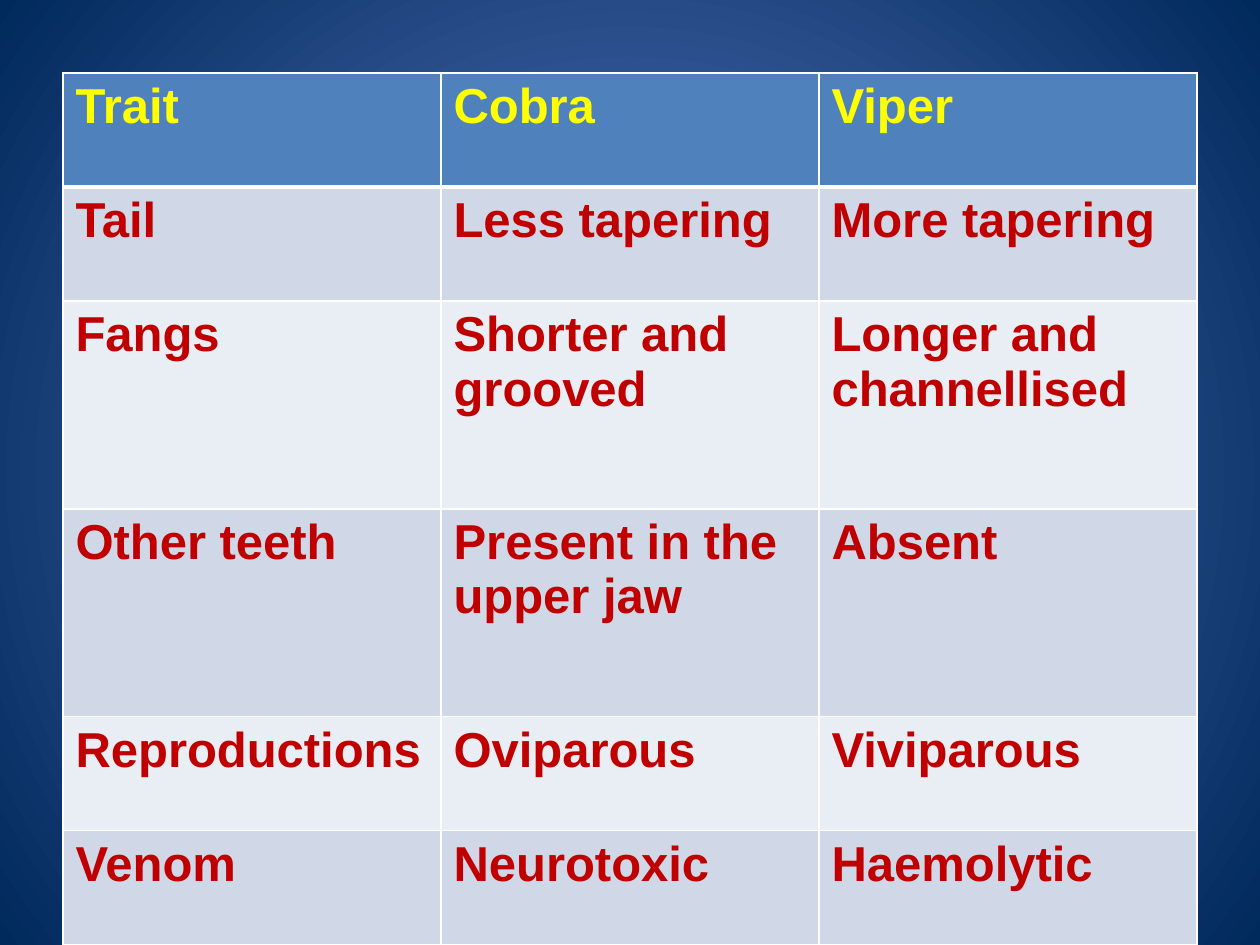
from dataclasses import dataclass

from lxml import etree
from pptx import Presentation
from pptx.dml.color import RGBColor
from pptx.enum.dml import MSO_THEME_COLOR
from pptx.oxml.ns import qn
from pptx.util import Pt

ACCENT = MSO_THEME_COLOR.ACCENT_1
BLANK_LAYOUT = 6


@dataclass(frozen=True)
class Theme:
    font: str = "Arial"
    text_size: float = 28
    header_text: str = "FFFF00"
    body_text: str = "C00000"
    header_fill: str = "4F81BD"
    band_fills: tuple = ("D0D8E8", "E9EDF4")
    border: str = "FFFFFF"
    border_width: float = 1
    header_rule_width: float = 3
    glow_center: str = "5E7CC5"
    glow_edge: str = "00295C"


THEME = Theme()

TRAITS = [
    ("Trait", "Cobra", "Viper"),
    ("Tail", "Less tapering", "More tapering"),
    ("Fangs", "Shorter and grooved", "Longer and channellised"),
    ("Other teeth", "Present in the upper jaw", "Absent"),
    ("Reproductions", "Oviparous", "Viviparous"),
    ("Venom", "Neurotoxic", "Haemolytic"),
]
TABLE_LEFT, TABLE_TOP = 36, 41.76
COLUMN_WIDTH = 216
SHORT_ROW, TALL_ROW = 65.15, 118.7
TALL_ROWS = (2, 3)


def set_glow_background(page):
    """Fill the page with a gradient that spreads in circles from its centre."""
    fill = page.background.fill
    fill.gradient()
    for stop, color in zip(fill.gradient_stops, (THEME.glow_center, THEME.glow_edge)):
        stop.color.theme_color = ACCENT  # drops the default tints
        stop.color.rgb = RGBColor.from_string(color)
    for stop, position in zip(fill.gradient_stops, (0, 1)):
        stop.position = position
    gradient = next(page.element.iter(qn("a:gradFill")))
    linear = gradient.find(qn("a:lin"))
    circle = etree.Element(qn("a:path"), {"path": "circle"})
    middle = dict.fromkeys("ltrb", "50000")
    etree.SubElement(circle, qn("a:fillToRect"), middle)
    gradient.replace(linear, circle)


def write_text(frame, text, *, size, color, font, bold=False):
    para = frame.paragraphs[0]
    span = para.add_run()
    span.text = text
    span.font.size = Pt(size)
    span.font.name = font
    span.font.bold = bold
    span.font.color.rgb = RGBColor.from_string(color)


def set_borders(cell, widths):
    """Draw cell borders; widths maps L, R, T and B, in that order, to points."""
    properties = cell._tc.get_or_add_tcPr()
    for side, width in widths.items():
        line = etree.SubElement(properties, qn(f"a:ln{side}"), w=str(Pt(width)))
        fill = etree.SubElement(line, qn("a:solidFill"))
        etree.SubElement(fill, qn("a:srgbClr"), val=THEME.border)


def format_cell(cell, text, row_index):
    is_header = row_index == 0
    widths = dict.fromkeys("LRTB", THEME.border_width)
    if row_index < 2:
        widths["B" if is_header else "T"] = THEME.header_rule_width
    set_borders(cell, widths)
    band = THEME.band_fills[(row_index - 1) % 2]
    cell.fill.solid()
    cell.fill.fore_color.rgb = RGBColor.from_string(
        THEME.header_fill if is_header else band)
    write_text(cell.text_frame, text, size=THEME.text_size, font=THEME.font, bold=True,
               color=THEME.header_text if is_header else THEME.body_text)


def add_trait_table(page):
    heights = [TALL_ROW if i in TALL_ROWS else SHORT_ROW for i in range(len(TRAITS))]
    column_count = len(TRAITS[0])
    table = page.shapes.add_table(
        len(TRAITS), column_count, Pt(TABLE_LEFT), Pt(TABLE_TOP),
        Pt(COLUMN_WIDTH * column_count), Pt(sum(heights))).table
    for column in table.columns:
        column.width = Pt(COLUMN_WIDTH)
    for row_index, (row, texts) in enumerate(zip(table.rows, TRAITS)):
        row.height = Pt(heights[row_index])
        for cell, text in zip(row.cells, texts):
            format_cell(cell, text, row_index)


def main():
    deck = Presentation()
    deck.slide_width, deck.slide_height = Pt(720), Pt(540)
    page = deck.slides.add_slide(deck.slide_layouts[BLANK_LAYOUT])
    set_glow_background(page)
    add_trait_table(page)
    deck.save("out.pptx")


if __name__ == "__main__":
    main()
